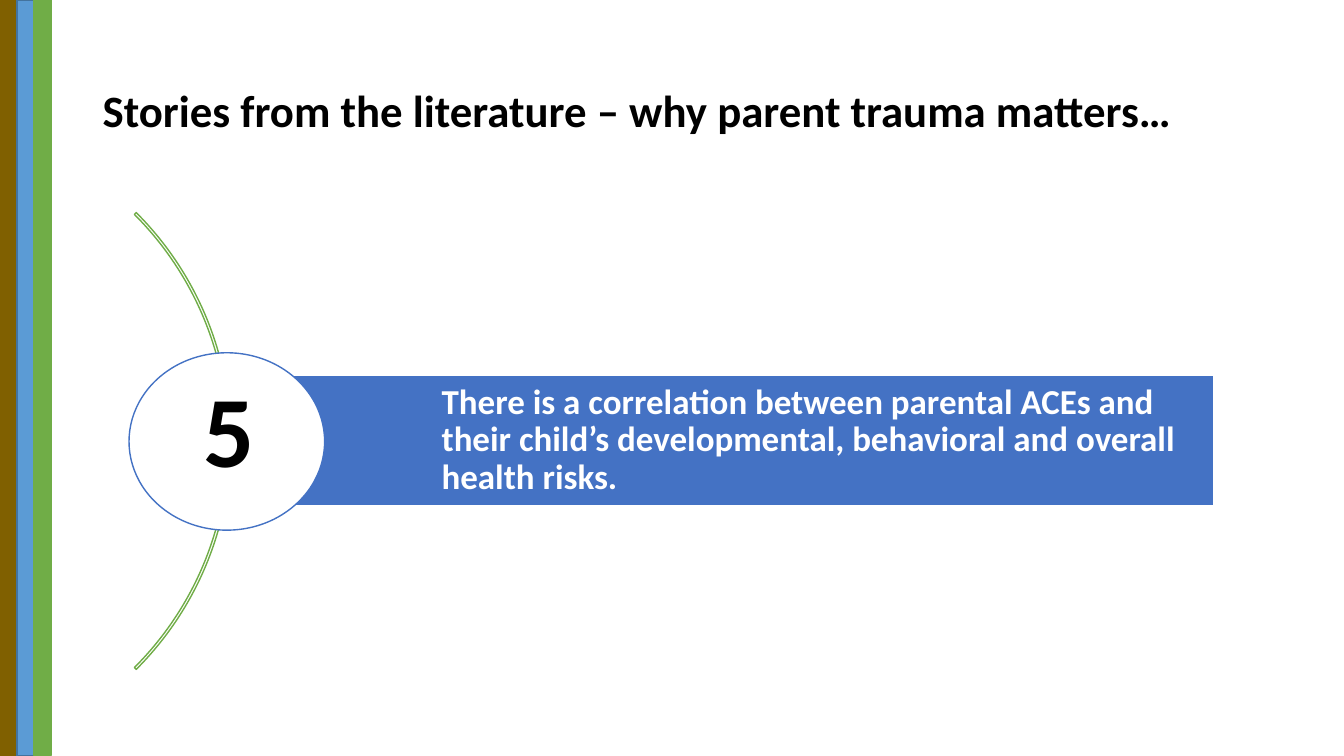
from pptx import Presentation
from pptx.dml.color import RGBColor
from pptx.enum.shapes import MSO_SHAPE as SHAPE
from pptx.enum.text import MSO_ANCHOR as ANCHOR
from pptx.util import Inches, Pt

FONT = "Calibri"
BLACK = RGBColor(0x00, 0x00, 0x00)
WHITE = RGBColor(0xFF, 0xFF, 0xFF)
BLUE = RGBColor(0x44, 0x72, 0xC4)
GREEN = RGBColor(0x70, 0xAD, 0x47)
BROWN = RGBColor(0x80, 0x60, 0x00)
SKY = RGBColor(0x5B, 0x9B, 0xD5)
SKY_EDGE = RGBColor(0x43, 0x73, 0x9E)


def add_shape(s, kind, box, fill, line):
    """Add a flat preset shape; a fill of None leaves it hollow."""
    sp = s.shapes.add_shape(kind, *map(Inches, box))
    sp.shadow.inherit = False
    if fill is None:
        sp.fill.background()
    else:
        sp.fill.solid()
        sp.fill.fore_color.rgb = fill
    sp.line.color.rgb = line
    sp.line.width = Pt(1)
    return sp


def set_text(sp, text, size, color, anchor=ANCHOR.MIDDLE, spacing=0.9,
             insets=(0.1, 0.05, 0.1, 0.05), wrap=True):
    """Write one bold, left-aligned paragraph into a shape."""
    tf = sp.text_frame
    tf.text = text
    tf.word_wrap = wrap
    tf.vertical_anchor = anchor
    tf.margin_left, tf.margin_top, tf.margin_right, tf.margin_bottom = map(Inches, insets)
    p = tf.paragraphs[0]
    p.alignment = 1
    p.line_spacing = spacing
    font = p.runs[0].font
    font.name, font.size, font.bold = FONT, Pt(size), True
    font.color.rgb = color


def add_text(s, box, text, size, color, **layout):
    sp = s.shapes.add_textbox(*map(Inches, box))
    set_text(sp, text, size, color, **layout)


def main():
    prs = Presentation()
    prs.slide_width, prs.slide_height = Inches(13.33), Inches(7.5)
    s = prs.slides.add_slide(prs.slide_layouts[6])

    # Title
    add_text(s, (0.92, 0.4, 11.5, 1.45),
             "Stories from the literature – why parent trauma matters…", 32, BLACK)

    # Arc behind the numbered point
    arc = add_shape(s, SHAPE.BLOCK_ARC, (-4.12, 1.17, 6.41, 6.41), None, GREEN)
    for i, value in enumerate((189, 27, 0.004)):
        arc.adjustments[i] = value

    # Message bar
    bar = add_shape(s, SHAPE.RECTANGLE, (2.49, 3.72, 9.55, 1.3), BLUE, WHITE)
    set_text(bar, "There is a correlation between parental ACEs and their child’s "
             "developmental, behavioral and overall health risks.", 25, WHITE,
             insets=(1.89, 0.07, 0.07, 0.07))

    # Number badge
    add_shape(s, SHAPE.OVAL, (1.28, 3.5, 1.94, 1.76), WHITE, BLUE)
    add_text(s, (1.92, 3.59, 0.79, 1.31), "5", 72, BLACK,
             anchor=ANCHOR.TOP, spacing=1.0, wrap=False)

    # Stripes down the left edge
    stripes = ((0, 0, BROWN, BROWN), (0.17, 0, SKY, SKY_EDGE), (0.33, -0.01, GREEN, GREEN))
    for left, top, fill, line in stripes:
        add_shape(s, SHAPE.RECTANGLE, (left, top, 0.18, 7.5), fill, line)

    prs.save("out.pptx")


if __name__ == "__main__":
    main()
